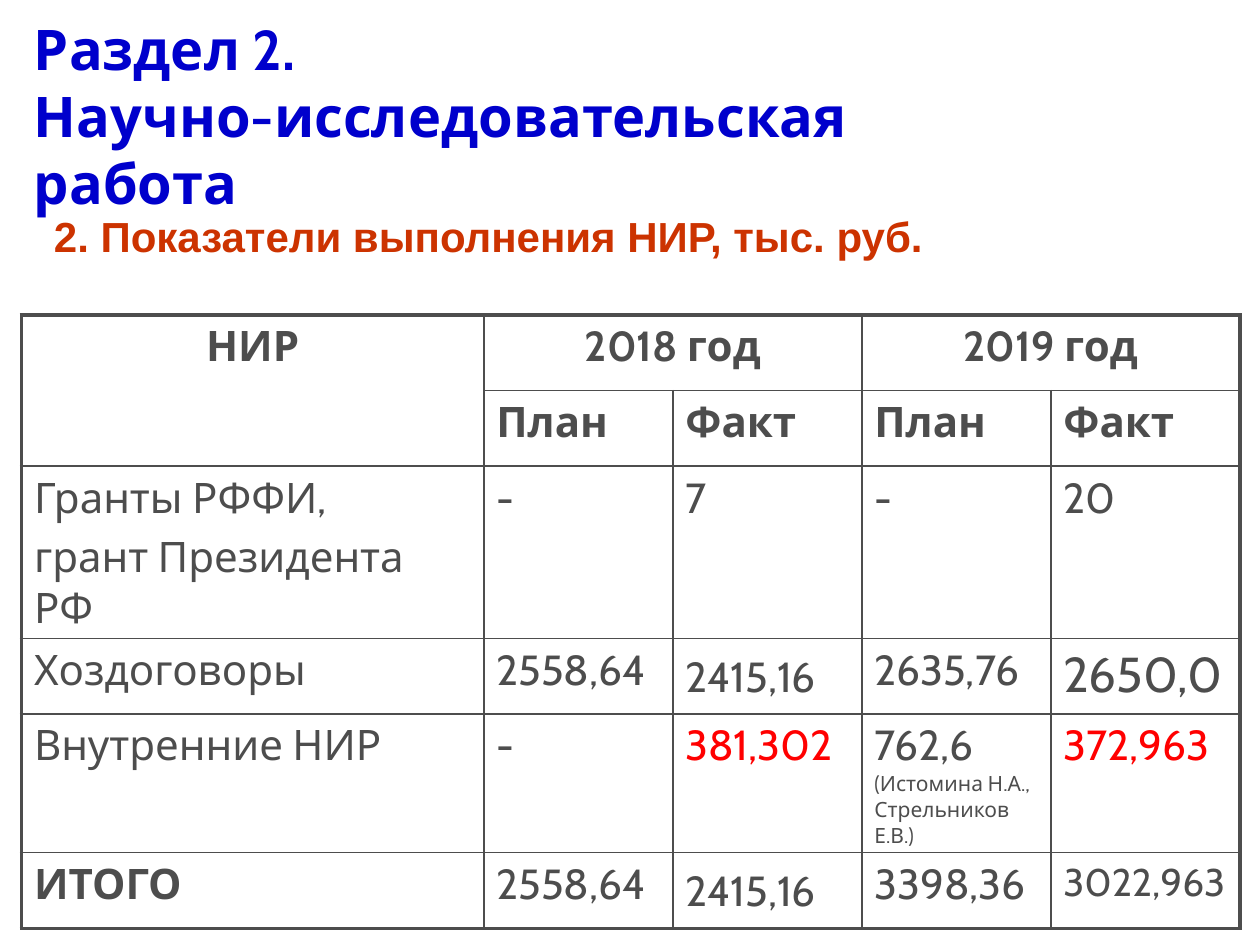
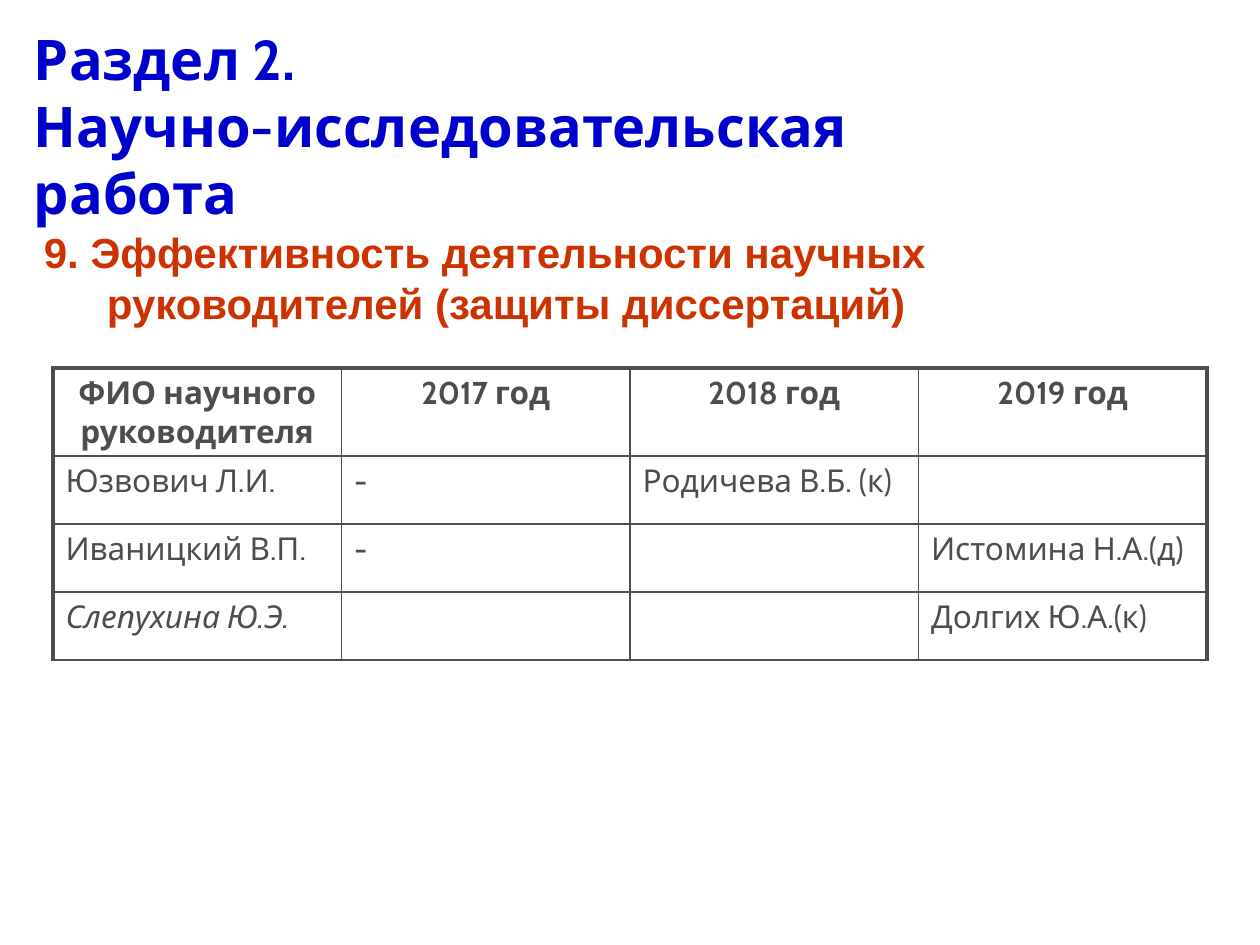
from dataclasses import dataclass

from lxml import etree
from pptx import Presentation
from pptx.dml.color import RGBColor
from pptx.enum.text import MSO_ANCHOR, PP_ALIGN
from pptx.oxml.ns import qn
from pptx.util import Inches, Pt

MIDDLE = MSO_ANCHOR.MIDDLE
LEFT, CENTER = PP_ALIGN.LEFT, PP_ALIGN.CENTER


@dataclass(frozen=True)
class Theme:
    title_color: str = "0000CC"
    heading_color: str = "CC3300"
    table_color: str = "4D4D4D"
    accent_color: str = "FF0000"
    body_font: str = "Cabin"
    heading_font: str = "Arial"
    title_size: int = 32
    heading_size: int = 24
    large_size: int = 28
    total_size: int = 22
    note_size: int = 12
    inner_line: float = 1
    outer_line: float = 2.25


THEME = Theme()

SECTION_TITLE = ["Раздел 2.", "Научно-исследовательская работа"]
ACCENT = {"color": THEME.accent_color}
LARGE = {"size": THEME.large_size}

# A cell is a plain string (one paragraph per line) or a list of (text, style) runs.
FUNDING_ROWS = [
    ["НИР", "2018 год", "", "2019 год", ""],
    ["", "План", "Факт", "План", "Факт"],
    ["Гранты РФФИ,\nгрант Президента РФ", "-", "7", "-", "20"],
    ["Хоздоговоры", "2558,64", [("2415,16", {}), (" ", LARGE)], "2635,76",
     [("2650,0", LARGE)]],
    ["Внутренние НИР", "-", [("381,302", ACCENT)],
     [("762,6 ", {}), ("(Истомина Н.А., Стрельников Е.В.)", {"size": THEME.note_size})],
     [("372,963", ACCENT)]],
    [[("ИТОГО", {"bold": True})], "2558,64", [("2415,16", {}), (" ", LARGE)], "3398,36",
     [("3022,963", {"size": THEME.total_size})]],
]
SUPERVISOR_ROWS = [
    ["ФИО научного руководителя", "2017 год", "2018 год", "2019 год"],
    ["Юзвович Л.И.", "-", "Родичева В.Б. (к)", ""],
    ["Иваницкий В.П.", "-", "", "Истомина Н.А.(д)"],
    [[("Слепухина Ю.Э.", {"italic": True})], "", "", "Долгих Ю.А.(к)"],
]

SLIDES = [
    {
        "title_top": 0.25,
        "heading": "2. Показатели выполнения НИР, тыс. руб.",
        "heading_box": (0.33, 1.62, 8.42, 0.5),
        "table": {
            "rows": FUNDING_ROWS, "origin": (0.17, 2.5), "size": 24,
            "widths": [3.67] + [1.5] * 4,
            "heights": [0.6, 0.6, 0.98, 0.6, 1.1, 0.6],
            "merges": [((0, 0), (1, 0)), ((0, 1), (0, 2)), ((0, 3), (0, 4))],
            "bold_rows": 2, "thick_bottom": True,
        },
    },
    {
        "title_top": 0.33,
        "heading": "9. Эффективность деятельности научных руководителей (защиты диссертаций)",
        "heading_box": (0.25, 1.75, 9.08, 0.9),
        "table": {
            "rows": SUPERVISOR_ROWS, "origin": (0.42, 2.92), "size": 18,
            "widths": [2.29] * 4,
            "heights": [0.7] + [0.54] * 3,
            "merges": [], "bold_rows": 1, "thick_bottom": False,
        },
    },
]


def add_run(paragraph, text, size, color, font=THEME.body_font, bold=False, italic=False):
    run = paragraph.add_run()
    run.text = text
    run.font.name = font
    run.font.size = Pt(size)
    run.font.bold = bold
    run.font.italic = italic
    run.font.color.rgb = RGBColor.from_string(color)


def add_text_frame(slide, box):
    frame = slide.shapes.add_textbox(*map(Inches, box)).text_frame
    frame.word_wrap = True
    frame.vertical_anchor = MIDDLE
    return frame


def add_title(slide, top):
    paragraph = add_text_frame(slide, (0.17, top, 8, 1.33)).paragraphs[0]
    for index, line in enumerate(SECTION_TITLE):
        if index:
            paragraph.add_line_break()
        add_run(paragraph, line, THEME.title_size, THEME.title_color, bold=True)


def add_heading(slide, text, box):
    """Numbered heading with a hanging indent."""
    paragraph = add_text_frame(slide, box).paragraphs[0]
    properties = paragraph._p.get_or_add_pPr()
    properties.set("marL", str(Inches(0.5)))
    properties.set("indent", str(Inches(-0.5)))
    add_run(paragraph, text, THEME.heading_size, THEME.heading_color,
            THEME.heading_font, bold=True)


def set_borders(cell, thick):
    """Draw all four sides; those named in thick get the outer width."""
    properties = cell._tc.get_or_add_tcPr()
    for side in "LRTB":
        width = THEME.outer_line if side in thick else THEME.inner_line
        line = etree.SubElement(properties, qn("a:ln" + side), w=str(Pt(width)))
        fill = etree.SubElement(line, qn("a:solidFill"))
        etree.SubElement(fill, qn("a:srgbClr"), val=THEME.table_color)


def fill_cell(cell, content, size, bold, align):
    if not content:
        return
    if isinstance(content, str):
        paragraphs = [[(line, {})] for line in content.split("\n")]
    else:
        paragraphs = [content]
    for index, runs in enumerate(paragraphs):
        paragraph = cell.text_frame.add_paragraph() if index else cell.text_frame.paragraphs[0]
        paragraph.alignment = align
        if index:
            paragraph.space_before = Pt(0.2 * size)
        for text, style in runs:
            base = {"size": size, "color": THEME.table_color, "bold": bold}
            add_run(paragraph, text, **{**base, **style})


def add_data_table(slide, rows, origin, size, widths, heights, merges, bold_rows, thick_bottom):
    extent = (*origin, sum(widths), sum(heights))
    table = slide.shapes.add_table(len(rows), len(widths), *map(Inches, extent)).table
    table.first_row = table.horz_banding = False
    for column, width in zip(table.columns, widths):
        column.width = Inches(width)
    for row, height in zip(table.rows, heights):
        row.height = Inches(height)
    for first, last in merges:
        table.cell(*first).merge(table.cell(*last))

    for r, row in enumerate(rows):
        for c, content in enumerate(row):
            cell = table.cell(r, c)
            last_row, last_column = r, c
            if cell.is_merge_origin:
                last_row += cell.span_height - 1
                last_column += cell.span_width - 1
            edges = {
                "L": c == 0,
                "R": last_column == len(widths) - 1,
                "T": r == 0,
                "B": thick_bottom and last_row == len(rows) - 1,
            }
            set_borders(cell, [side for side, outer in edges.items() if outer])
            cell.fill.background()
            fill_cell(cell, content, size, r < bold_rows, LEFT if r else CENTER)


def main():
    presentation = Presentation()
    presentation.slide_width, presentation.slide_height = Inches(10), Inches(7.5)
    blank = presentation.slide_layouts[6]
    for content in SLIDES:
        slide = presentation.slides.add_slide(blank)
        add_title(slide, content["title_top"])
        add_heading(slide, content["heading"], content["heading_box"])
        add_data_table(slide, **content["table"])
    presentation.save("out.pptx")


if __name__ == "__main__":
    main()
